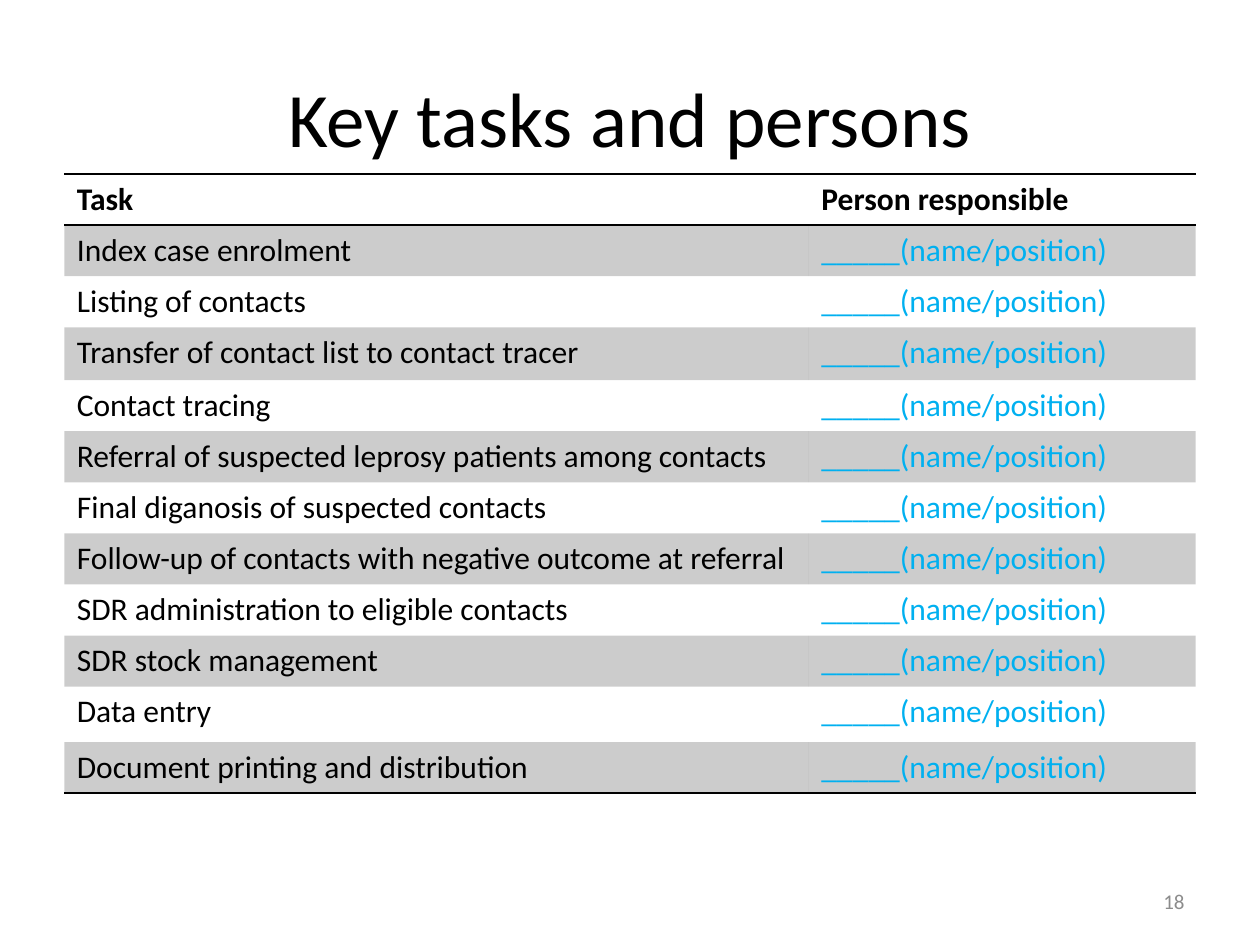
from lxml import etree
from pptx import Presentation
from pptx.dml.color import RGBColor
from pptx.enum.text import MSO_ANCHOR, PP_ALIGN
from pptx.oxml.ns import qn
from pptx.util import Pt

MIDDLE = MSO_ANCHOR.MIDDLE
CENTER, RIGHT = PP_ALIGN.CENTER, PP_ALIGN.RIGHT

# Content
TITLE = "Key tasks and persons"
SLIDE_NUMBER = "18"
HEADER = ("Task", "Person responsible")
TASKS = [
    "Index case enrolment",
    "Listing of contacts",
    "Transfer of contact list to contact tracer",
    "Contact tracing",
    "Referral of suspected leprosy patients among contacts",
    "Final diganosis of suspected contacts",
    "Follow-up of contacts with negative outcome at referral",
    "SDR administration to eligible contacts",
    "SDR stock management",
    "Data entry",
    "Document printing and distribution",
]
PERSON = "_____(name/position)"

# Style, lengths in points
COLORS = {"text": "000000", "person": "00B0F0", "number": "8C8C8C"}
FONT = "Calibri"
BAND_OPACITY = 20
COLUMN_WIDTHS = (425.5, 221)
ROW_HEIGHT = 29.2
TALL_ROWS = {"Transfer of contact list to contact tracer": 30.2, "Data entry": 31.7}
NO_STYLE = "{2D5ABB26-0587-4C30-8999-92F81FD0307C}"


def add_run(paragraph, text, size, color, bold=False):
    run = paragraph.add_run()
    run.text = text
    run.font.name = FONT
    run.font.size = Pt(size)
    run.font.bold = bold
    run.font.color.rgb = RGBColor.from_string(color)


def fill_band(cell):
    cell.fill.solid()
    cell.fill.fore_color.rgb = RGBColor.from_string(COLORS["text"])
    color = cell._tc.tcPr.find(qn("a:solidFill"))[0]
    etree.SubElement(color, qn("a:alpha"), val=str(BAND_OPACITY * 1000))


def add_borders(cell, sides):
    properties = cell._tc.get_or_add_tcPr()
    for position, side in enumerate(sides):
        line = etree.Element(qn(f"a:ln{side}"), w=str(Pt(1)))
        fill = etree.SubElement(line, qn("a:solidFill"))
        etree.SubElement(fill, qn("a:srgbClr"), val=COLORS["text"])
        properties.insert(position, line)


presentation = Presentation()
presentation.slide_width, presentation.slide_height = Pt(720), Pt(540)
slide = presentation.slides.add_slide(presentation.slide_layouts[5])

# Title
title = slide.shapes.title
title.left, title.top, title.width, title.height = Pt(36), Pt(21.6), Pt(648), Pt(90)
title.text_frame.vertical_anchor = MIDDLE
title.text_frame.paragraphs[0].alignment = CENTER
add_run(title.text_frame.paragraphs[0], TITLE, 44, COLORS["text"])

# Slide number
number = slide.shapes.add_textbox(Pt(516), Pt(500.5), Pt(168), Pt(28.75))
number.text_frame.word_wrap = True
number.text_frame.vertical_anchor = MIDDLE
number.text_frame.paragraphs[0].alignment = RIGHT
add_run(number.text_frame.paragraphs[0], SLIDE_NUMBER, 12, COLORS["number"])

# Task table
rows = [HEADER] + [(task, PERSON) for task in TASKS]
heights = [TALL_ROWS.get(row[0], ROW_HEIGHT) for row in rows]
table = slide.shapes.add_table(
    len(rows), len(HEADER), Pt(36.75), Pt(99.4), Pt(sum(COLUMN_WIDTHS)), Pt(sum(heights))
).table
table._tbl.tblPr.find(qn("a:tableStyleId")).text = NO_STYLE
for column, width in zip(table.columns, COLUMN_WIDTHS):
    column.width = Pt(width)

for row_index, row in enumerate(rows):
    table.rows[row_index].height = Pt(heights[row_index])
    is_header = row_index == 0
    for column_index, text in enumerate(row):
        cell = table.cell(row_index, column_index)
        is_person = column_index == 1 and not is_header
        color = COLORS["person" if is_person else "text"]
        add_run(cell.text_frame.paragraphs[0], text, 18, color, is_header)
        if row_index % 2:
            fill_band(cell)
        else:
            cell.fill.background()
        if is_header:
            add_borders(cell, "TB")
        elif row_index == len(rows) - 1:
            add_borders(cell, "B")

presentation.save("out.pptx")
